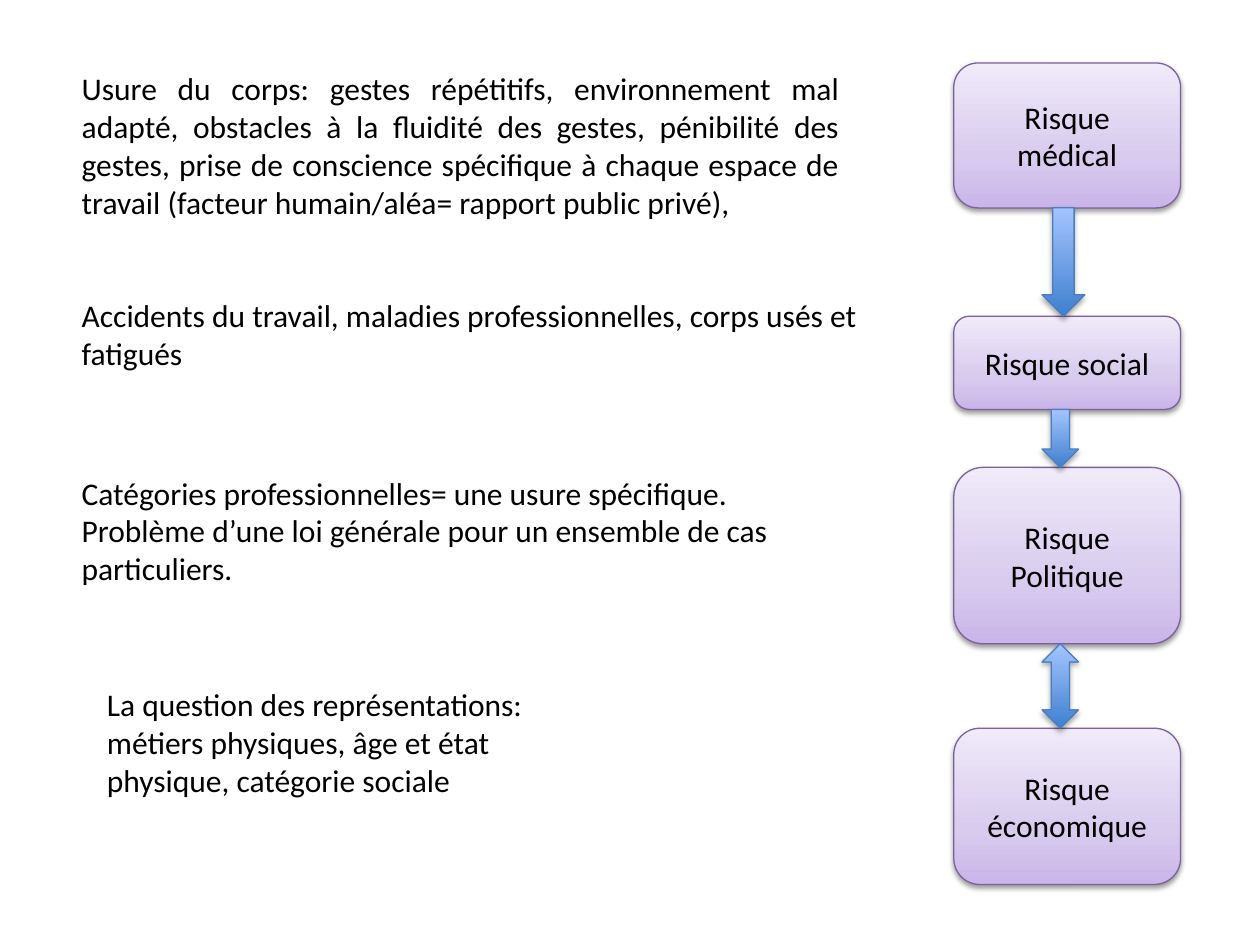
from copy import deepcopy
from itertools import pairwise

from lxml.etree import SubElement
from pptx import Presentation
from pptx.dml.color import RGBColor
from pptx.enum.shapes import MSO_SHAPE
from pptx.enum.text import MSO_ANCHOR, MSO_AUTO_SIZE, PP_ALIGN
from pptx.oxml.ns import qn
from pptx.util import Inches, Pt

COLUMNS, ROWS = 10, 7.5  # one grid cell is one inch square
BLACK = RGBColor(0x00, 0x00, 0x00)
PURPLE_LINE = RGBColor(0x7D, 0x60, 0xA0)
PURPLE_STOPS = [
    (0, RGBColor(0xC9, 0xB5, 0xE8)),
    (0.35, RGBColor(0xD8, 0xCB, 0xEE)),
    (1, RGBColor(0xF0, 0xEA, 0xF9)),
]
BLUE_LINE = RGBColor(0x4B, 0x7E, 0xBC)
BLUE_STOPS = [
    (0, RGBColor(0x3F, 0x80, 0xCE)),
    (1, RGBColor(0xA4, 0xC4, 0xFF)),
]

TEXT_LEFT = 0.55
RISK_LEFT, RISK_WIDTH = 7.57, 1.8
ARROW_LEFT = 8.27

COMMENTS = [
    (TEXT_LEFT, 0.5, 6.21, 1.62, PP_ALIGN.JUSTIFY,
     "Usure du corps: gestes répétitifs, environnement mal adapté, obstacles à la "
     "fluidité des gestes, pénibilité des gestes, prise de conscience spécifique à "
     "chaque espace de travail (facteur humain/aléa= rapport public privé), "),
    (TEXT_LEFT, 2.3, 6.55, 0.71, PP_ALIGN.LEFT,
     "Accidents du travail, maladies professionnelles, corps usés et fatigués"),
    (TEXT_LEFT, 3.71, 6.03, 1.01, PP_ALIGN.LEFT,
     "Catégories professionnelles= une usure spécifique. Problème d’une loi "
     "générale pour un ensemble de cas particuliers."),
    (0.75, 5.39, 4.18, 1.01, PP_ALIGN.LEFT,
     "La question des représentations: métiers physiques, âge et état physique, "
     "catégorie sociale"),
]
RISKS = [  # top, height, text
    (0.5, 1.15, "Risque médical"),
    (2.51, 0.74, "Risque social"),
    (3.71, 1.4, "Risque\nPolitique"),
    (5.78, 1.24, "Risque économique"),
]
ARROWS = [  # one per gap between risks: preset, width
    (MSO_SHAPE.DOWN_ARROW, 0.34),
    (MSO_SHAPE.DOWN_ARROW, 0.29),
    (MSO_SHAPE.UP_DOWN_ARROW, 0.29),
]


class SlideBuilder:
    font_format = {"name": "Calibri", "size": Pt(18)}

    def __init__(self, deck):
        self.page = deck.slides.add_slide(deck.slide_layouts[6])
        self.column = deck.slide_width / COLUMNS
        self.row = deck.slide_height / ROWS

    def place(self, left, top, width, height):
        """Turn grid columns and rows into slide lengths."""
        return (round(left * self.column), round(top * self.row),
                round(width * self.column), round(height * self.row))

    def set_text(self, frame, text, align):
        frame.word_wrap = True
        frame.text = text
        for para in frame.paragraphs:
            para.alignment = align
            for name, value in self.font_format.items():
                setattr(para.font, name, value)
            para.font.color.rgb = BLACK

    def comment(self, left, top, width, height, align, text):
        box = self.page.shapes.add_textbox(*self.place(left, top, width, height))
        self.set_text(box.text_frame, text, align)
        box.text_frame.auto_size = MSO_AUTO_SIZE.SHAPE_TO_FIT_TEXT

    def glossy_shape(self, preset, area, stops, line_color, shadow_share):
        """Add a shape with an upward gradient, a thin line and a soft shadow."""
        shape = self.page.shapes.add_shape(preset, *self.place(*area))
        shape.fill.gradient()
        shape.fill.gradient_angle = 90
        stop_list = next(shape.element.spPr.iter(qn("a:gsLst")))
        while len(stop_list) < len(stops):
            stop_list.append(deepcopy(stop_list[-1]))
        for stop, (position, color) in zip(shape.fill.gradient_stops, stops):
            stop.position = position
            stop.color.rgb = color
        shape.line.color.rgb = line_color
        shape.line.width = Pt(0.75)
        self.add_shadow(shape, shadow_share)
        return shape

    def add_shadow(self, shape, share):
        shape.shadow.inherit = False
        effects = shape.element.spPr.find(qn("a:effectLst"))
        shadow = SubElement(effects, qn("a:outerShdw"), blurRad=str(Pt(3.1)),
                            dist=str(Pt(1.7)), dir="5400000", rotWithShape="0")
        color = SubElement(shadow, qn("a:srgbClr"), val=str(BLACK))
        SubElement(color, qn("a:alpha"), val=str(share * 1000))

    def risk(self, top, height, text):
        box = self.glossy_shape(MSO_SHAPE.ROUNDED_RECTANGLE,
                                (RISK_LEFT, top, RISK_WIDTH, height),
                                PURPLE_STOPS, PURPLE_LINE, 38)
        self.set_text(box.text_frame, text, PP_ALIGN.CENTER)
        box.text_frame.vertical_anchor = MSO_ANCHOR.MIDDLE

    def arrow(self, preset, top, width, height):
        self.glossy_shape(preset, (ARROW_LEFT, top, width, height),
                          BLUE_STOPS, BLUE_LINE, 35)


def main():
    deck = Presentation()
    deck.slide_width, deck.slide_height = Inches(COLUMNS), Inches(ROWS)
    builder = SlideBuilder(deck)
    for comment in COMMENTS:
        builder.comment(*comment)
    for risk in RISKS:
        builder.risk(*risk)
    for (preset, width), (upper, lower) in zip(ARROWS, pairwise(RISKS)):
        bottom = upper[0] + upper[1]
        builder.arrow(preset, bottom, width, lower[0] - bottom)
    deck.save("out.pptx")


if __name__ == "__main__":
    main()
